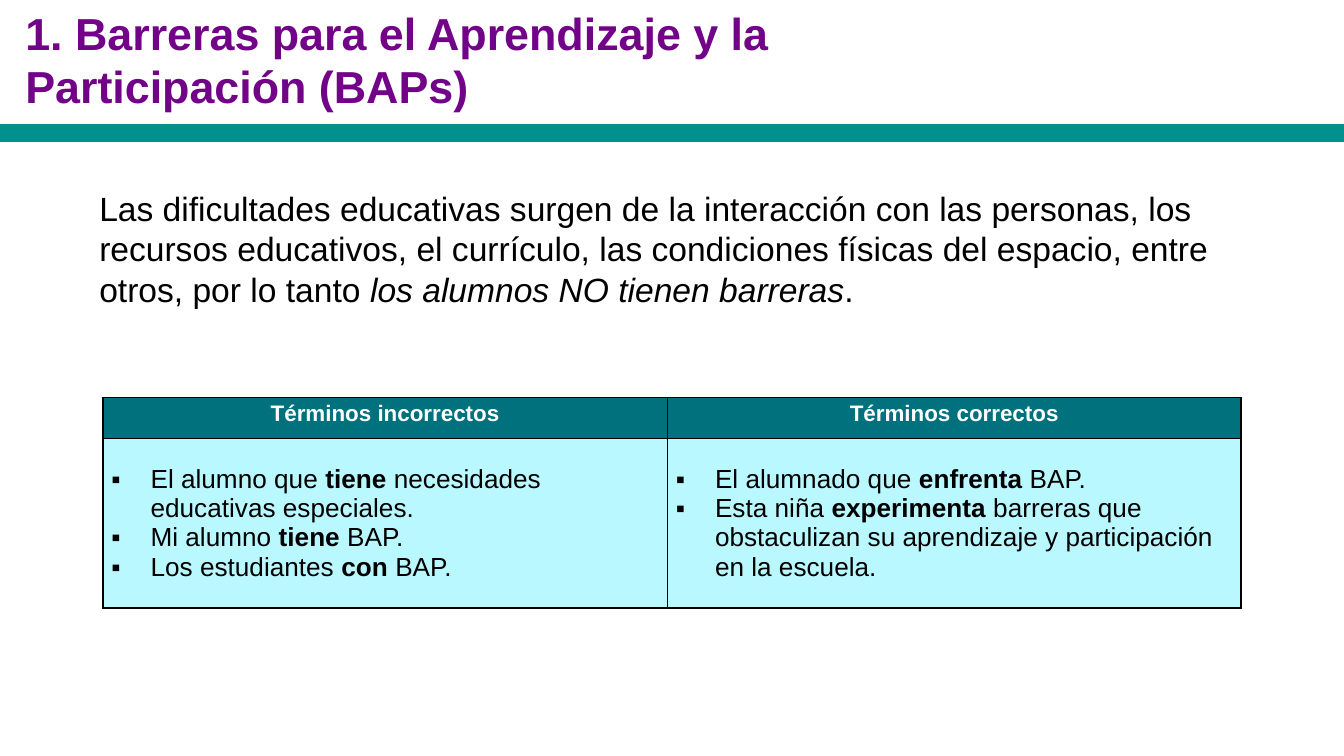
from lxml import etree
from pptx import Presentation
from pptx.dml.color import RGBColor
from pptx.enum.shapes import MSO_CONNECTOR
from pptx.enum.text import MSO_ANCHOR, PP_ALIGN
from pptx.oxml import parse_xml
from pptx.oxml.ns import nsdecls, qn
from pptx.util import Pt

PURPLE = RGBColor(0x72, 0x02, 0x88)
TEAL = RGBColor(0x00, 0x91, 0x8E)
DARK_TEAL = RGBColor(0x00, 0x71, 0x7D)
PALE_BLUE = RGBColor(0xBA, 0xF8, 0xFF)
BLACK = RGBColor(0x00, 0x00, 0x00)
WHITE = RGBColor(0xFF, 0xFF, 0xFF)


def write(p, text, size, color=BLACK, bold=False, emphasis=None):
    """Fill a paragraph; parts between asterisks get the emphasis, 'bold' or 'italic'."""
    for i, part in enumerate(text.split("*")):
        r = p.add_run()
        r.text = part
        r.font.name = "Arial"
        r.font.size = Pt(size)
        r.font.color.rgb = color
        r.font.bold = bold
        if i % 2:
            setattr(r.font, emphasis, True)


def style_cell(cell, fill, anchor):
    cell.fill.solid()
    cell.fill.fore_color.rgb = fill
    cell.vertical_anchor = anchor
    cell.margin_left = cell.margin_right = Pt(4.5)
    cell.margin_top = cell.margin_bottom = 0
    tcPr = cell._tc.get_or_add_tcPr()
    for i, side in enumerate(("lnL", "lnR", "lnT", "lnB")):
        tcPr.insert(i, parse_xml(
            f'<a:{side} {nsdecls("a")} w="12700"><a:solidFill>'
            f'<a:srgbClr val="{BLACK}"/></a:solidFill></a:{side}>'))


prs = Presentation()
prs.slide_width, prs.slide_height = Pt(720), Pt(405)
s = prs.slides.add_slide(prs.slide_layouts[6])

# Table of terms
columns = [
    ("Términos incorrectos", 302.4, [
        "El alumno que *tiene* necesidades educativas especiales.",
        "Mi alumno *tiene* BAP.",
        "Los estudiantes *con* BAP.",
    ]),
    ("Términos correctos", 307.4, [
        "El alumnado que *enfrenta* BAP.",
        "Esta niña *experimenta* barreras que obstaculizan su aprendizaje "
        "y participación en la escuela.",
    ]),
]
table = s.shapes.add_table(2, 2, Pt(55.2), Pt(213), Pt(609.8), Pt(112.6)).table
table.rows[0].height, table.rows[1].height = Pt(22), Pt(90.6)

for col, (heading, width, terms) in enumerate(columns):
    table.columns[col].width = Pt(width)

    head = table.cell(0, col)
    style_cell(head, DARK_TEAL, MSO_ANCHOR.TOP)
    p = head.text_frame.paragraphs[0]
    p.alignment = PP_ALIGN.CENTER
    p.line_spacing = 1.15
    write(p, heading, 12, color=WHITE, bold=True)

    body = table.cell(1, col)
    style_cell(body, PALE_BLUE, MSO_ANCHOR.MIDDLE)
    tf = body.text_frame
    for i, term in enumerate(terms):
        p = tf.add_paragraph() if i else tf.paragraphs[0]
        pPr = p._p.get_or_add_pPr()
        pPr.set("marL", str(Pt(21)))
        pPr.set("indent", str(-Pt(21)))
        bullet_color = etree.SubElement(pPr, qn("a:buClr"))
        etree.SubElement(bullet_color, qn("a:srgbClr"), val=str(BLACK))
        etree.SubElement(pPr, qn("a:buFont"), typeface="Arial")
        etree.SubElement(pPr, qn("a:buChar"), char="▪")
        write(p, term, 14, emphasis="bold")

# Title and introduction
texts = [
    ((6.5, -0.7, 481.7, 65.5),
     "1. Barreras para el Aprendizaje y la Participación (BAPs)",
     dict(size=24, color=PURPLE, bold=True)),
    ((46.1, 97.2, 646.6, 72.7),
     "Las dificultades educativas surgen de la interacción con las personas, "
     "los recursos educativos, el currículo, las condiciones físicas del espacio, "
     "entre otros, por lo tanto *los alumnos NO tienen barreras*.",
     dict(size=18, emphasis="italic")),
]
for box, text, style in texts:
    tf = s.shapes.add_textbox(*map(Pt, box)).text_frame
    tf.word_wrap = True
    write(tf.paragraphs[0], text, **style)

# Double rule under the title
for y in (69.2, 73.3):
    line = s.shapes.add_connector(MSO_CONNECTOR.STRAIGHT, 0, Pt(y), Pt(720), Pt(y))
    line.line.color.rgb = TEAL
    line.line.width = Pt(6)
    etree.SubElement(line._element.spPr, qn("a:effectLst"))

prs.save("out.pptx")
